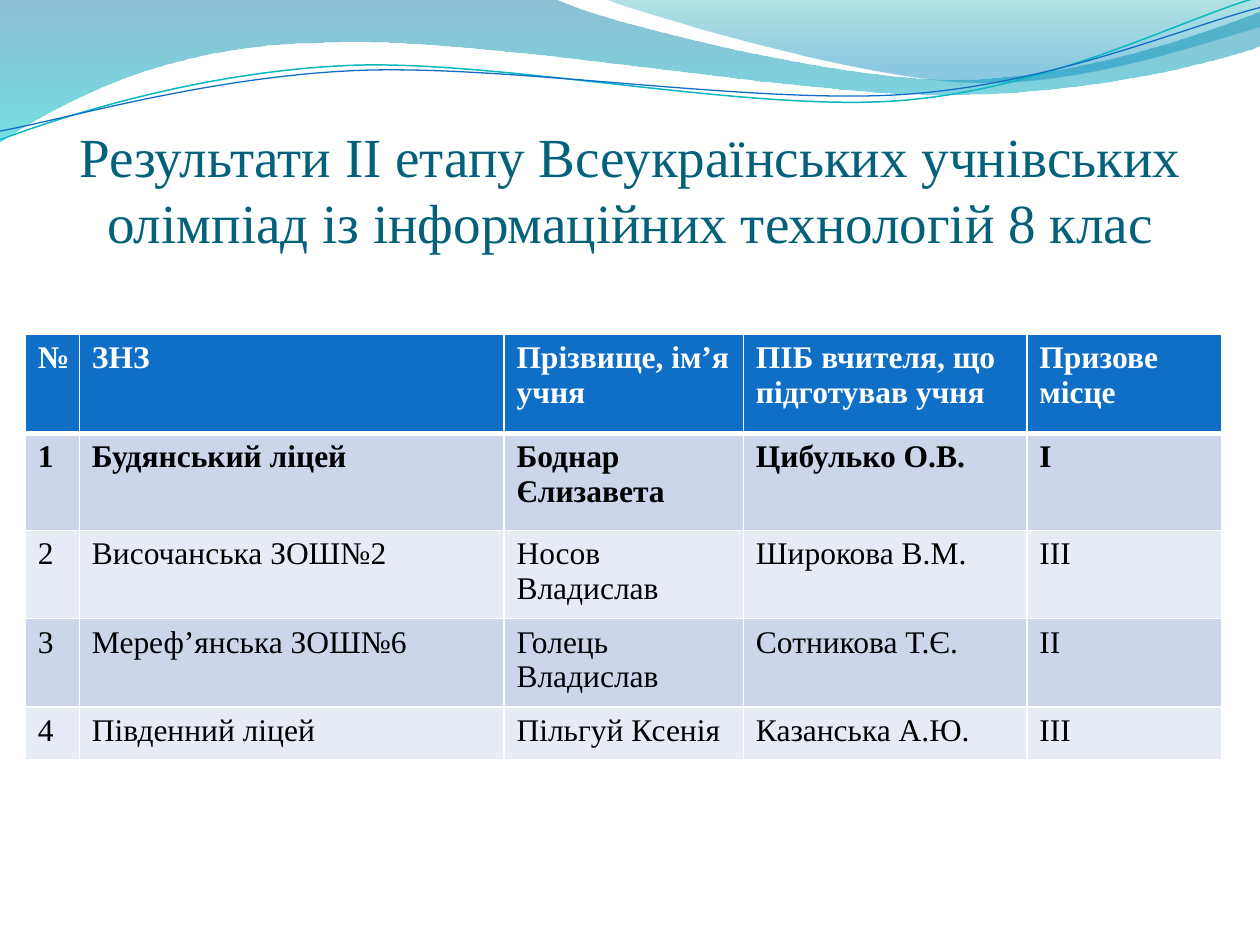
from lxml import etree
from pptx import Presentation, util as u
from pptx.dml.color import RGBColor
from pptx.enum import text as t
from pptx.oxml import ns

FONT = "Times New Roman"
BLUE, WHITE, BLACK = "0F6FC6", "FFFFFF", "000000"
BANDS = ["CCD5EA", "E7EBF5"]
UNIT = 100


def tint(code):
    return RGBColor.from_string(code)


def node(root, tag, **attrs):
    return etree.SubElement(root, ns.qn(tag), attrs)


def write(frame, words, size=18, color=BLACK, bold=False, align=None):
    para = frame.paragraphs[0]
    para.alignment = align
    run = para.add_run()
    run.text = words
    font = run.font
    font.name, font.size, font.bold = FONT, u.Pt(size), bold
    font.color.rgb = tint(color)


def bend(shape, parts, left, top):
    lines = list(shape._element.iter(ns.qn("a:lnTo")))
    for line, part in zip(lines, parts):
        if len(part) == 2:
            continue
        arc = etree.Element(ns.qn("a:cubicBezTo"))
        for x, y in zip(part[::2], part[1::2]):
            node(arc, "a:pt", x=str(round((x - left) * UNIT)),
                 y=str(round((y - top) * UNIT)))
        line.getparent().replace(line, arc)


class Deck:
    def __init__(self):
        self.show = Presentation()
        self.show.slide_width, self.show.slide_height = u.Inches(10), u.Inches(7.5)
        self.slide = self.show.slides.add_slide(self.show.slide_layouts[6])

    def trace(self, start, parts, close):
        ends = [start] + [part[-2:] for part in parts]
        spots = [(round(x * UNIT), round(y * UNIT)) for x, y in ends]
        pen = self.slide.shapes.build_freeform(*spots[0], scale=u.Inches(1) / UNIT)
        pen.add_line_segments(spots[1:], close=close)
        shape = pen.convert_to_shape()
        shape.shadow.inherit = False
        bend(shape, parts, min(x for x, y in ends), min(y for x, y in ends))
        return shape

    def wave(self, start, parts, stops):
        shape = self.trace(start, parts, True)
        shape.line.fill.background()
        shape.fill.gradient()
        grad = shape._element.spPr.find(ns.qn("a:gradFill"))
        for kid in list(grad):
            grad.remove(kid)
        marks = node(grad, "a:gsLst")
        for pos, code, alpha in stops:
            mark = node(marks, "a:gs", pos=str(pos * 1000))
            shade = node(mark, "a:srgbClr", val=code)
            node(shade, "a:alpha", val=str(alpha * 1000))
        node(grad, "a:lin", ang="5400000", scaled="0")

    def strand(self, start, parts, color, width):
        shape = self.trace(start, parts, False)
        shape.fill.background()
        shape.line.color.rgb = tint(color)
        shape.line.width = u.Pt(width)

    def title(self, words, left, top, width, height):
        box = self.slide.shapes.add_textbox(*map(u.Inches, (left, top, width, height)))
        frame = box.text_frame
        frame.word_wrap = True
        frame.vertical_anchor = t.MSO_ANCHOR.BOTTOM
        frame.margin_left = frame.margin_right = frame.margin_bottom = 0
        write(frame, words, size=31.5, color="04617B", align=t.PP_ALIGN.CENTER)

    def edge(self, cell, **widths):
        props = cell._tc.get_or_add_tcPr()
        for spot, (side, width) in enumerate(widths.items()):
            line = etree.Element(ns.qn("a:ln" + side), w=str(u.Pt(width)))
            fill = node(line, "a:solidFill")
            node(fill, "a:srgbClr", val=WHITE)
            props.insert(spot, line)

    def table(self, rows, left, top, widths, heights):
        grid = self.slide.shapes.add_table(
            len(rows), len(widths), u.Inches(left), u.Inches(top),
            u.Inches(sum(widths)), u.Inches(sum(heights))).table
        for col, width in zip(grid.columns, widths):
            col.width = u.Inches(width)
        for r, row in enumerate(rows):
            grid.rows[r].height = u.Inches(heights[r])
            for c, words in enumerate(row):
                cell = grid.cell(r, c)
                cell.fill.solid()
                cell.fill.fore_color.rgb = tint(BANDS[(r - 1) % 2] if r else BLUE)
                self.edge(cell, L=1, R=1, T=3 if r == 1 else 1, B=1 if r else 3)
                write(cell.text_frame, words, color=BLACK if r else WHITE, bold=r < 2)


def main():
    deck = Deck()
    deck.wave((0, -0.01), [
        (4.4, -0.01), (4.76, 0.17, 6.64, 0.63, 7.58, 0.63),
        (8.53, 0.63, 9.58, 0.26, 10, 0.09), (10.01, 0.36),
        (9.83, 0.44, 8.7, 0.76, 7.46, 0.75), (6.22, 0.75, 3.82, 0.28, 2.57, 0.34),
        (1.29, 0.35, 0.46, 0.83, -0.01, 1.13),
    ], [(0, "0074A1", 45), (100, "00C6CF", 55)])
    deck.wave((4.79, -0.01), [
        (5.09, 0.11, 6.82, 0.62, 7.69, 0.65),
        (8.56, 0.69, 9.61, 0.32, 10, 0.21), (10, 0),
    ], [(0, "00A1A9", 30), (80, "008BBF", 45)])
    deck.strand((0, 1.11), [
        (0.48, 0.93, 1.58, 0.57, 2.77, 0.52), (3.95, 0.47, 5.93, 0.89, 7.13, 0.8),
        (8.33, 0.71, 9.38, 0.15, 9.98, -0.02),
    ], "0AB8BF", 0.85)
    deck.strand((0, 1.04), [
        (0.47, 0.96, 1.64, 0.61, 2.83, 0.56), (4.03, 0.51, 5.97, 0.83, 7.17, 0.75),
        (8.36, 0.67, 9.41, 0.21, 10, 0.06),
    ], BLUE, 0.75)
    deck.title("Результати ІІ етапу Всеукраїнських учнівських олімпіад "
               "із інформаційних технологій 8 клас", 0.5, 0.77, 9, 1.25)
    deck.table([
        ["№", "ЗНЗ", "Прізвище, ім’я учня", "ПІБ вчителя, що підготував учня",
         "Призове місце"],
        ["1", "Будянський ліцей", "Боднар Єлизавета", "Цибулько О.В.", "І"],
        ["2", "Височанська ЗОШ№2", "Носов Владислав", "Широкова В.М.", "ІІІ"],
        ["3", "Мереф’янська ЗОШ№6", "Голець Владислав", "Сотникова Т.Є.", "ІІ"],
        ["4", "Південний ліцей", "Пільгуй Ксенія", "Казанська А.Ю.", "ІІІ"],
    ], 0.2, 2.65, [0.43, 3.37, 1.9, 2.25, 1.55], [0.79, 0.77, 0.42, 0.42, 0.42])
    deck.show.save("out.pptx")


if __name__ == "__main__":
    main()
